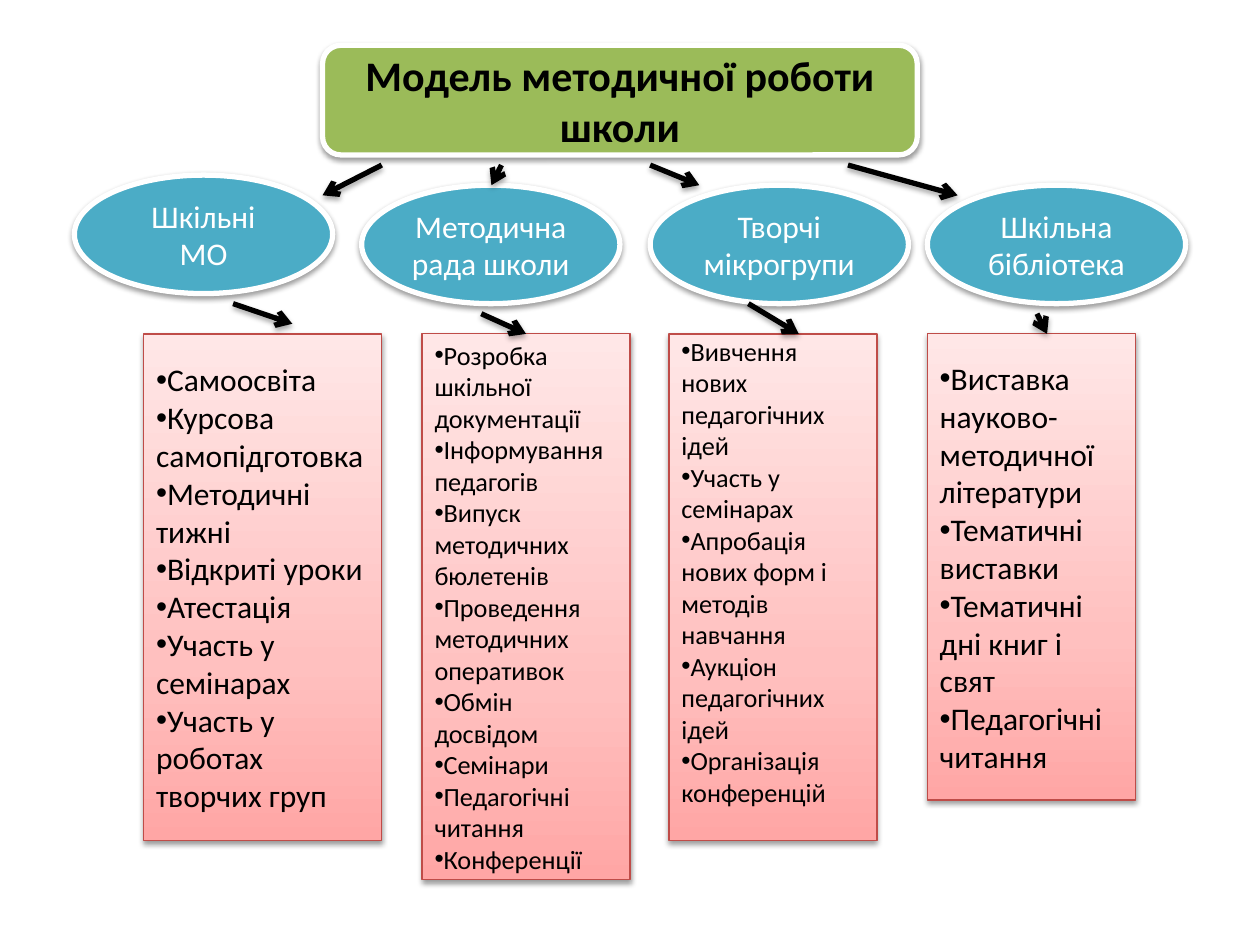
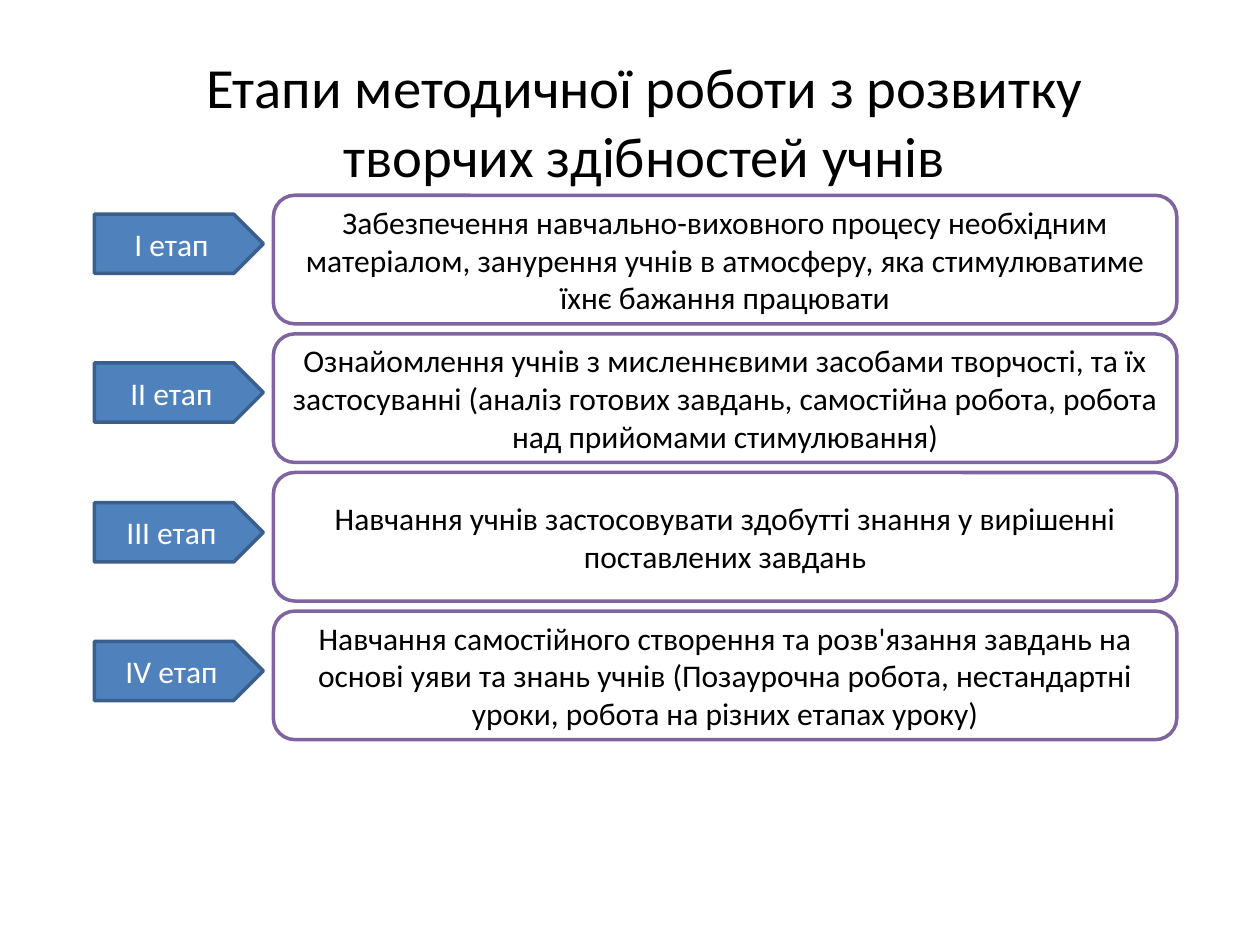
import copy

import pptx
import pptx.dml.color
import pptx.enum.shapes
import pptx.enum.text
import pptx.oxml
import pptx.oxml.ns
import pptx.util

RGBColor = pptx.dml.color.RGBColor
MSO_SHAPE = pptx.enum.shapes.MSO_SHAPE
PP_ALIGN = pptx.enum.text.PP_ALIGN
Pt = pptx.util.Pt

# Shared colours and font
BLACK = RGBColor(0x00, 0x00, 0x00)
WHITE = RGBColor(0xFF, 0xFF, 0xFF)
GREEN = RGBColor(0x9B, 0xBB, 0x59)
TEAL = RGBColor(0x4B, 0xAC, 0xC6)
BLUE = RGBColor(0x4F, 0x81, 0xBD)
DARK_BLUE = RGBColor(0x3A, 0x5F, 0x8C)
PURPLE = RGBColor(0x80, 0x64, 0xA2)
RED = RGBColor(0xBF, 0x4C, 0x48)
PINKS = ((0, RGBColor(0xFF, 0xA6, 0xA5)),
         (0.35, RGBColor(0xFF, 0xC0, 0xBF)),
         (1, RGBColor(0xFF, 0xE7, 0xE7)))
FONT = "Calibri"

# Grid of square cells over the slide
COLS, ROWS = 100, 75
TITLE_ONLY, BLANK = 5, 6


class Deck:
    """Holds the style and the current slide; lengths are grid cells."""

    def __init__(self):
        self.prs = pptx.Presentation()
        self.prs.slide_width = pptx.util.Inches(10)
        self.prs.slide_height = pptx.util.Inches(7.5)
        self.s = None

    def cells(self, *lengths):
        return [round(n * self.prs.slide_width / COLS) for n in lengths]

    def slide(self, layout):
        self.s = self.prs.slides.add_slide(self.prs.slide_layouts[layout])

    def run(self, p, text, size, color, bold=False):
        r = p.add_run()
        r.text = text
        r.font.name, r.font.size, r.font.bold = FONT, Pt(size), bold
        r.font.color.rgb = color

    def title(self, text, at, size):
        sp = self.s.shapes.title
        sp.left, sp.top, sp.width, sp.height = self.cells(*at)
        tf = sp.text_frame
        tf.auto_size = pptx.enum.text.MSO_AUTO_SIZE.NONE
        tf.vertical_anchor = pptx.enum.text.MSO_ANCHOR.MIDDLE
        p = tf.paragraphs[0]
        p.alignment = PP_ALIGN.CENTER
        self.run(p, text, size, BLACK)

    def shadow(self, effects, alpha, distance):
        outer = pptx.oxml.parse_xml(
            f'<a:outerShdw {pptx.oxml.ns.nsdecls("a")} blurRad="{Pt(3.1)}" '
            f'dist="{Pt(distance)}" dir="5400000" rotWithShape="0">'
            f'<a:srgbClr val="{BLACK}"><a:alpha val="{alpha * 1000}"/>'
            '</a:srgbClr></a:outerShdw>')
        effects.append(outer)

    def shape(self, kind, at, line, width, fill=None, shadow=False):
        sp = self.s.shapes.add_shape(kind, *self.cells(*at))
        if fill is not None:
            sp.fill.solid()
            sp.fill.fore_color.rgb = fill
        sp.line.color.rgb = line
        sp.line.width = Pt(width)
        sp.shadow.inherit = False
        if shadow:
            effects = sp._element.spPr.find(pptx.oxml.ns.qn("a:effectLst"))
            self.shadow(effects, 38, 1.6)
        sp.text_frame.word_wrap = True
        sp.text_frame.vertical_anchor = pptx.enum.text.MSO_ANCHOR.MIDDLE
        return sp

    def label(self, kind, at, text, fill, line, color, width=2, size=18,
              bold=False, shadow=False):
        sp = self.shape(kind, at, line, width, fill, shadow)
        p = sp.text_frame.paragraphs[0]
        p.alignment = PP_ALIGN.CENTER
        self.run(p, text, size, color, bold)

    def bullet_box(self, at, items, size, lift=0):
        """Pink box; lift is extra bottom inset that raises the list."""
        sp = self.shape(MSO_SHAPE.RECTANGLE, at, RED, 0.75, shadow=True)
        sp.fill.gradient()
        sp.fill.gradient_angle = 90
        stops = sp._element.spPr.find(".//" + pptx.oxml.ns.qn("a:gsLst"))
        stops.insert(1, copy.deepcopy(stops[0]))
        for stop, (position, color) in zip(sp.fill.gradient_stops, PINKS):
            stop.position, stop.color.rgb = position, color
        tf = sp.text_frame
        tf.margin_bottom += self.cells(lift)[0]
        for i, item in enumerate(items):
            p = tf.add_paragraph() if i else tf.paragraphs[0]
            p.alignment = PP_ALIGN.LEFT
            pPr = p._p.get_or_add_pPr()
            for tag, name, value in (("buFont", "typeface", "Arial"),
                                     ("buChar", "char", "•")):
                pPr.append(pptx.oxml.parse_xml(
                    f'<a:{tag} {pptx.oxml.ns.nsdecls("a")} {name}="{value}"/>'))
            self.run(p, item, size, BLACK)
        return sp

    def arrow(self, start, end, target=None):
        c = self.s.shapes.add_connector(
            pptx.enum.shapes.MSO_CONNECTOR.STRAIGHT, *self.cells(*start, *end))
        if target is not None:
            c.end_connect(target, 0)
        c.line.color.rgb = BLACK
        c.line.width = Pt(3)
        ns = pptx.oxml.ns.nsdecls("a")
        c.line._get_or_add_ln().append(
            pptx.oxml.parse_xml(f'<a:tailEnd {ns} type="arrow"/>'))
        effects = pptx.oxml.parse_xml(f"<a:effectLst {ns}/>")
        c._element.spPr.append(effects)
        self.shadow(effects, 35, 1.8)


def model_slide(deck):
    deck.slide(BLANK)
    deck.label(MSO_SHAPE.FLOWCHART_ALTERNATE_PROCESS, (25.6, 3.6, 47.2, 8.7),
               "Модель методичної роботи школи", GREEN, WHITE, BLACK,
               width=3, size=24, bold=True, shadow=True)

    # Branches of the model
    for left, top, text in ((5.9, 13.9, "Шкільні МО"),
                            (28.7, 14.7, "Методична рада школи"),
                            (51.6, 14.7, "Творчі мікрогрупи"),
                            (73.6, 14.7, "Шкільна бібліотека")):
        deck.label(MSO_SHAPE.OVAL, (left, top, 20.5, 9.4), text, TEAL, WHITE,
                   WHITE, width=3, shadow=True)

    # Arrows from the heading to the branches
    for x, end in ((30.3, (25.6, 15.5)), (51.6, (55.5, 14.7)),
                   (39.8, (39, 14.7)), (67.3, (76, 15.5))):
        deck.arrow((x, 13.1), end)

    # Activities of each branch: left, width, height, size, lift, items
    activities = (
        (11.4, 18.9, 40.2, 18, 0,
         ("Самоосвіта", "Курсова самопідготовка", "Методичні тижні",
          "Відкриті уроки", "Атестація", "Участь у семінарах",
          "Участь у роботах творчих груп")),
        (33.5, 16.5, 43.3, 15, 0,
         ("Розробка шкільної документації", "Інформування педагогів",
          "Випуск методичних бюлетенів", "Проведення методичних оперативок",
          "Обмін досвідом", "Семінари", "Педагогічні читання",
          "Конференції")),
        (53.1, 16.5, 40.2, 15, 2.5,
         ("Вивчення нових педагогічних ідей", "Участь у семінарах",
          "Апробація нових форм і методів навчання",
          "Аукціон педагогічних ідей", "Організація конференцій")),
        (73.6, 16.5, 37, 18, 0,
         ("Виставка науково-методичної літератури", "Тематичні виставки",
          "Тематичні дні книг і свят", "Педагогічні читання")),
    )
    boxes = [deck.bullet_box((left, 26.5, width, height), items, size, lift)
             for left, width, height, size, lift, items in activities]

    # Arrows from the branches to their activities
    deck.arrow((18.5, 24.1), (23.2, 25.7))
    deck.arrow((38.2, 24.9), (41.7, 26.5), boxes[1])
    deck.arrow((59.4, 24.1), (63.4, 26.5))
    deck.arrow((82.3, 24.9), (83.1, 26.5))


def stages_slide(deck):
    deck.slide(TITLE_ONLY)
    deck.title("Етапи методичної роботи з розвитку творчих здібностей учнів",
               (11.4, 5.2, 79.5, 8.7), 32.4)

    # Stage tags with their descriptions
    stages = (
        (17, "І етап",
         "Забезпечення навчально-виховного процесу необхідним матеріалом, "
         "занурення учнів в атмосферу, яка стимулюватиме їхнє бажання "
         "працювати"),
        (28.8, "ІІ етап",
         "Ознайомлення учнів з мисленнєвими засобами творчості, та їх "
         "застосуванні (аналіз готових завдань, самостійна робота, робота "
         "над прийомами стимулювання)"),
        (39.9, "ІІІ етап",
         "Навчання учнів застосовувати здобутті знання у вирішенні "
         "поставлених завдань"),
        (50.9, "ІV етап",
         "Навчання самостійного створення та розв'язання завдань на основі "
         "уяви та знань учнів (Позаурочна робота, нестандартні уроки, "
         "робота на різних етапах уроку)"),
    )
    for i, (tag_top, tag, text) in enumerate(stages):
        deck.label(MSO_SHAPE.PENTAGON, (7.5, tag_top, 13.4, 4.7), tag,
                   BLUE, DARK_BLUE, WHITE)
        deck.label(MSO_SHAPE.ROUNDED_RECTANGLE,
                   (21.7, 15.5 + 11 * i, 71.7, 10.2), text,
                   WHITE, PURPLE, BLACK)


def main():
    deck = Deck()
    model_slide(deck)
    stages_slide(deck)
    deck.prs.save("out.pptx")


if __name__ == "__main__":
    main()
